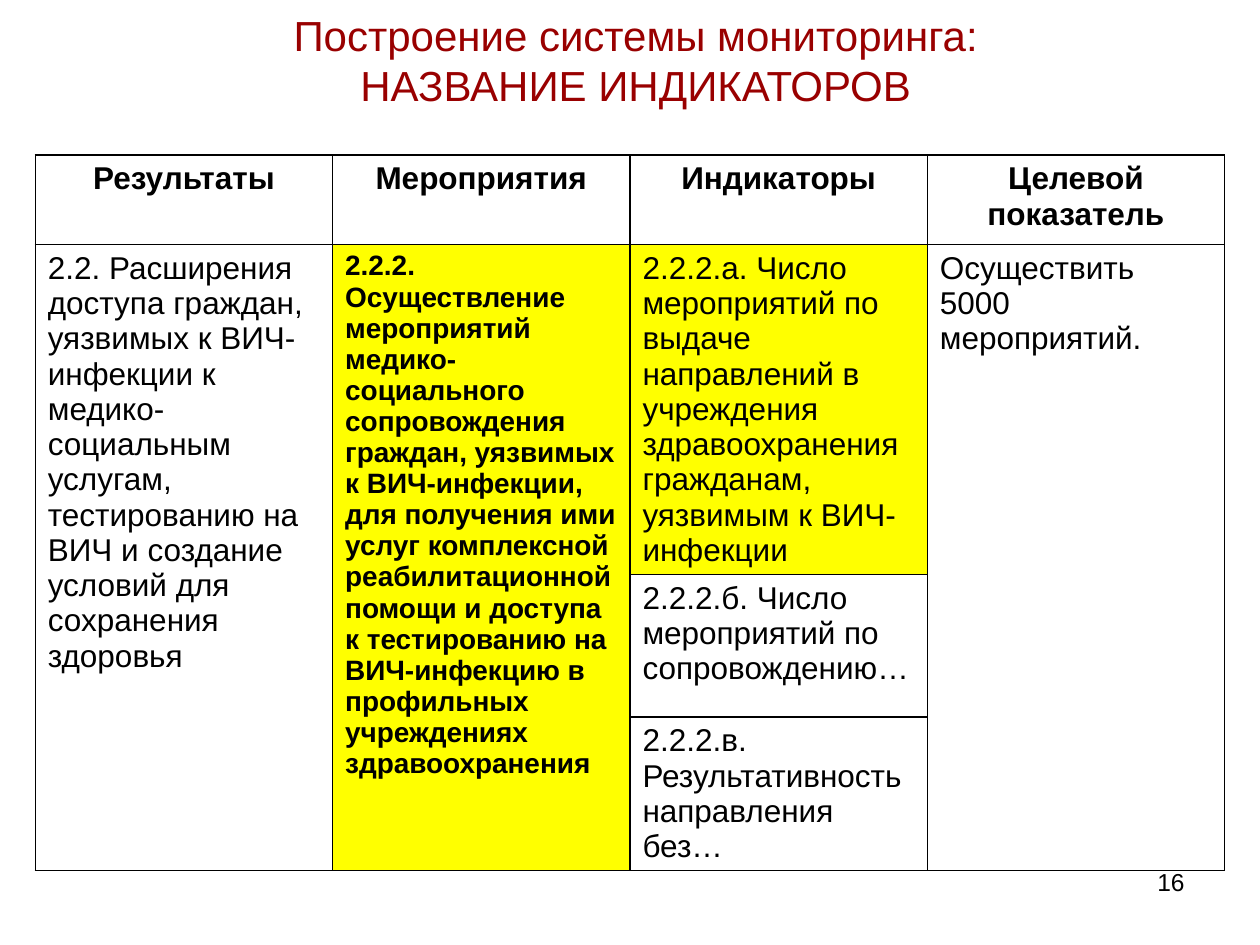
from lxml import etree
from pptx import Presentation
from pptx.dml.color import RGBColor
from pptx.enum.text import MSO_ANCHOR, PP_ALIGN
from pptx.oxml.ns import qn
from pptx.util import Inches, Pt

LEFT, CENTER, RIGHT = PP_ALIGN.LEFT, PP_ALIGN.CENTER, PP_ALIGN.RIGHT
MIDDLE = MSO_ANCHOR.MIDDLE
BLACK = RGBColor(0x00, 0x00, 0x00)
DARK_RED = RGBColor(0x99, 0x00, 0x00)
YELLOW = RGBColor(0xFF, 0xFF, 0x00)
WHITE = RGBColor(0xFF, 0xFF, 0xFF)

TITLE = ("Построение системы мониторинга:", "НАЗВАНИЕ ИНДИКАТОРОВ")
HEADERS = ("Результаты", "Мероприятия", "Индикаторы", "Целевой показатель")
RESULT = ("2.2. Расширения доступа граждан, уязвимых к ВИЧ-инфекции к "
          "медико-социальным услугам, тестированию на ВИЧ и создание условий "
          "для сохранения здоровья")
ACTIVITY = ("2.2.2. Осуществление мероприятий медико-социального сопровождения "
            "граждан, уязвимых к ВИЧ-инфекции, для получения ими услуг "
            "комплексной реабилитационной помощи и доступа к тестированию на "
            "ВИЧ-инфекцию в профильных учреждениях здравоохранения")
INDICATORS = (
    "2.2.2.а. Число мероприятий по выдаче направлений в учреждения "
    "здравоохранения гражданам, уязвимым к ВИЧ-инфекции",
    "2.2.2.б. Число мероприятий по сопровождению…",
    "2.2.2.в. Результативность направления без…",
)
TARGET = "Осуществить 5000 мероприятий."
ROW_HEIGHTS = (0.71, 2.6, 1.13, 1.2)
COL_WIDTH = 2.36


class Deck:
    """Holds the style and the current slide, and draws each kind of element."""

    font = "Arial"

    def __init__(self, prs):
        self.s = prs.slides.add_slide(prs.slide_layouts[5])

    def run(self, p, text, size, color=BLACK, bold=False):
        r = p.add_run()
        r.text = text
        r.font.name, r.font.size, r.font.bold = self.font, Pt(size), bold
        r.font.color.rgb = color

    def title(self, lines, box):
        sp = self.s.shapes.title
        sp.left, sp.top, sp.width, sp.height = map(Inches, box)
        tf = sp.text_frame
        tf.word_wrap, tf.vertical_anchor = True, MIDDLE
        tf.margin_top, tf.margin_bottom = 0, Inches(0.41)
        p = tf.paragraphs[0]
        p.alignment = CENTER
        for i, line in enumerate(lines):
            if i:
                p.add_line_break()
            self.run(p, line, 24, DARK_RED)

    def number(self, text, box):
        tf = self.s.shapes.add_textbox(*map(Inches, box)).text_frame
        tf.word_wrap = True
        p = tf.paragraphs[0]
        p.alignment = RIGHT
        self.run(p, text, 14)

    def table(self, left, top, heights, cols, col_width):
        tbl = self.s.shapes.add_table(
            len(heights), cols, Inches(left), Inches(top),
            Inches(cols * col_width), Inches(sum(heights))).table
        for row, height in zip(tbl.rows, heights):
            row.height = Inches(height)
        for cell in tbl.iter_cells():
            self.border(cell)
            self.fill(cell, WHITE)
        return tbl

    def border(self, cell):
        tcPr = cell._tc.get_or_add_tcPr()
        for side in ("a:lnL", "a:lnR", "a:lnT", "a:lnB"):
            ln = etree.SubElement(tcPr, qn(side), w=str(Pt(1)))
            fill = etree.SubElement(ln, qn("a:solidFill"))
            etree.SubElement(fill, qn("a:srgbClr"), val=str(BLACK))

    def fill(self, cell, color):
        cell.fill.solid()
        cell.fill.fore_color.rgb = color

    def cell(self, cell, text, size=18, bold=False, align=LEFT, fill=WHITE):
        self.fill(cell, fill)
        p = cell.text_frame.paragraphs[0]
        p.alignment = align
        self.run(p, text, size, bold=bold)


def main():
    prs = Presentation()
    prs.slide_width, prs.slide_height = Inches(10), Inches(7.5)
    deck = Deck(prs)
    deck.title(TITLE, (0.2, 0.13, 9.69, 1.1))

    tbl = deck.table(0.28, 1.23, ROW_HEIGHTS, len(HEADERS), COL_WIDTH)
    for col, text in enumerate(HEADERS):
        deck.cell(tbl.cell(0, col), text, bold=True, align=CENTER)
    for col in (0, 1, 3):
        tbl.cell(1, col).merge(tbl.cell(3, col))
    deck.cell(tbl.cell(1, 0), RESULT)
    deck.cell(tbl.cell(1, 1), ACTIVITY, size=16, bold=True, fill=YELLOW)
    deck.cell(tbl.cell(1, 3), TARGET)
    for row, text in enumerate(INDICATORS, 1):
        deck.cell(tbl.cell(row, 2), text, fill=YELLOW if row == 1 else WHITE)
    deck.number("16", (7.17, 6.83, 2.33, 0.52))
    prs.save("out.pptx")


if __name__ == "__main__":
    main()
